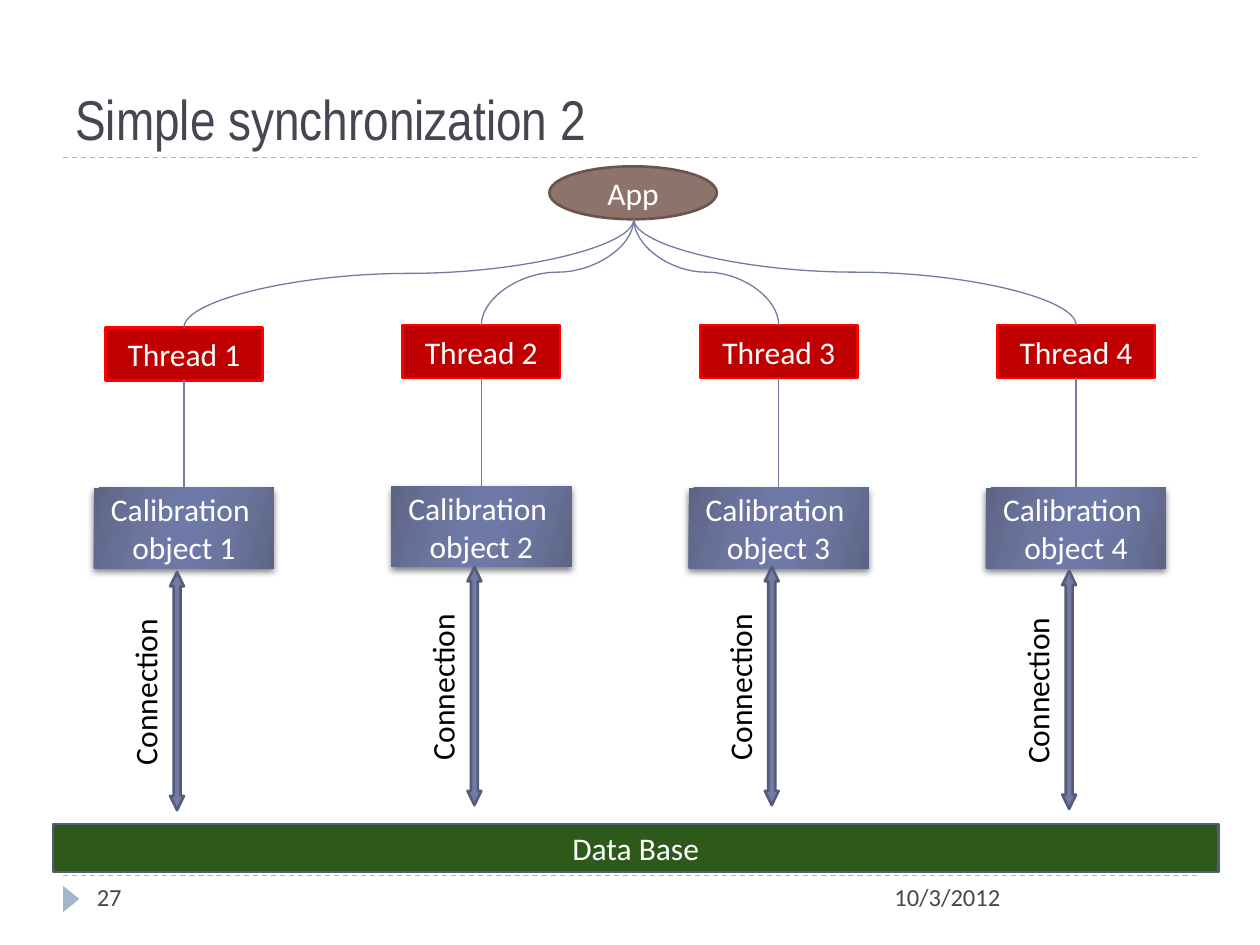
from lxml import etree
from pptx import Presentation
from pptx.dml.color import RGBColor
from pptx.enum.dml import MSO_LINE
from pptx.enum.shapes import MSO_CONNECTOR, MSO_SHAPE
from pptx.enum.text import MSO_ANCHOR, PP_ALIGN
from pptx.oxml import parse_xml
from pptx.oxml.ns import qn
from pptx.util import Inches, Pt

STRAIGHT, CURVE = MSO_CONNECTOR.STRAIGHT, MSO_CONNECTOR.CURVE
RECTANGLE, OVAL = MSO_SHAPE.RECTANGLE, MSO_SHAPE.OVAL
TRIANGLE, DOUBLE_ARROW = MSO_SHAPE.ISOSCELES_TRIANGLE, MSO_SHAPE.LEFT_RIGHT_ARROW
TOP, MIDDLE, BOTTOM = MSO_ANCHOR.TOP, MSO_ANCHOR.MIDDLE, MSO_ANCHOR.BOTTOM
LEFT, CENTER = PP_ALIGN.LEFT, PP_ALIGN.CENTER
DASH = MSO_LINE.DASH
SITE_TOP, SITE_BOTTOM = 0, 2
DRAWING_NS = "http://schemas.openxmlformats.org/drawingml/2006/main"

COLORS = {
    "rule": "9FB8CD", "heading": "464653", "white": "FFFFFF", "black": "000000",
    "app": "8E736A", "app_edge": "69554E", "thread": "C00000", "thread_edge": "FF0000",
    "database": "2D591B", "edge": "545C79", "link": "727CA3",
}
CALIBRATION_STOPS = [(0, "5D6585"), (30, "6B759E"), (45, "6E79A7"),
                     (55, "6E79A7"), (73, "6B759E"), (100, "5D6585")]
LABELS = [
    ("Simple synchronization 2", (0.5, 0.17, 9, 1.08), 32, "Arial Narrow", BOTTOM),
    ("10/3/2012", (7, 6.95, 2.5, 0.4), 14, "Calibri", TOP),
    ("27", (0.67, 6.95, 2.17, 0.4), 14, "Calibri", TOP),
]
RULES = [6.95, 1.25]
LANES = [
    {"number": 1, "thread": 2.6, "calibration": 3.87, "arrow": 5.43},
    {"number": 2, "thread": 2.58, "calibration": 3.86, "arrow": 5.39},
    {"number": 3, "thread": 2.58, "calibration": 3.87, "arrow": 5.39},
    {"number": 4, "thread": 2.58, "calibration": 3.87, "arrow": 5.42},
]
FIRST_CENTER, LANE_STEP = 1.46, 2.36
APP_CENTER, APP_BOTTOM = 5.03, 1.74
THREAD_WIDTH, CALIBRATION_WIDTH = 1.25, 1.43
ARROW_LENGTH, LABEL_LENGTH = 1.89, 1.38


def color(name):
    return RGBColor.from_string(COLORS[name])


def write(shape, text, ink="white", size=18, font="Calibri", align=CENTER, anchor=MIDDLE, wrap=True):
    frame = shape.text_frame
    frame.text = text
    frame.word_wrap = wrap
    frame.vertical_anchor = anchor
    for para in frame.paragraphs:
        para.alignment = align
        for span in para.runs:
            span.font.size = Pt(size)
            span.font.name = font
            span.font.color.rgb = color(ink)


def add_box(shapes, kind, place, fill, edge=None):
    box = shapes.add_shape(kind, *map(Inches, place))
    box.shadow.inherit = False
    box.fill.solid()
    box.fill.fore_color.rgb = color(fill)
    if edge:
        box.line.color.rgb = color(edge)
        box.line.width = Pt(1.5)
    else:
        box.line.fill.background()
    return box


def add_line(kind, ends, ink):
    line = page.shapes.add_connector(kind, *map(Inches, ends))
    line.line.color.rgb = color(ink)
    line.line.width = Pt(0.75)
    etree.SubElement(line._element.spPr, qn("a:effectLst"))
    return line


def add_branch(x, y):
    drop, reach = y - APP_BOTTOM, abs(x - APP_CENTER)
    left = (x + APP_CENTER - drop) / 2
    top = (y + APP_BOTTOM - reach) / 2
    branch = add_line(CURVE, (left, top, left + drop, top + reach), "link")
    frame = branch._element.spPr.find(qn("a:xfrm"))
    if x < APP_CENTER:
        frame.set("rot", "5400000")
    else:
        frame.set("rot", "16200000")
        frame.set("flipH", "1")


def style_calibration(box):
    box.fill.gradient()
    box.fill.gradient_angle = 344
    stops = box._element.spPr.find(qn("a:gradFill")).find(qn("a:gsLst"))
    for stop in list(stops):
        stops.remove(stop)
    for percent, value in CALIBRATION_STOPS:
        stop = etree.SubElement(stops, qn("a:gs"), pos=str(percent * 1000))
        etree.SubElement(stop, qn("a:srgbClr"), val=value)
    box._element.spPr.find(qn("a:effectLst")).append(parse_xml(
        f'<a:outerShdw xmlns:a="{DRAWING_NS}" blurRad="50800" dist="25400" dir="5400000" '
        'rotWithShape="0"><a:srgbClr val="000000"><a:alpha val="50000"/></a:srgbClr></a:outerShdw>'))


def add_connection(center, top):
    shapes = page.shapes.add_group_shape().shapes
    left = center - 1
    arrow = add_box(shapes, DOUBLE_ARROW, (left, top, ARROW_LENGTH, 0.11), "link", "edge")
    arrow.adjustments[0], arrow.adjustments[1] = 0.5, 1.03
    arrow.rotation = 90
    label = shapes.add_textbox(*map(Inches, (left, top - 0.15, LABEL_LENGTH, 0.4)))
    label.rotation = 270
    write(label, "Connection", "black", align=LEFT, anchor=TOP, wrap=False)


deck = Presentation()
deck.slide_width, deck.slide_height = Inches(10), Inches(7.5)
page = deck.slides.add_slide(deck.slide_layouts[6])

for y in RULES:
    add_line(STRAIGHT, (0.5, y, 9.5, y), "rule").line.dash_style = DASH
add_box(page.shapes, TRIANGLE, (0.46, 7.07, 0.21, 0.13), "rule").rotation = 90
for text, place, size, font, anchor in LABELS:
    label = page.shapes.add_textbox(*map(Inches, place))
    write(label, text, "heading", size, font, LEFT, anchor)

app = add_box(page.shapes, OVAL, (4.36, 1.32, 1.33, 0.42), "app", "app_edge")
write(app, "App")
database = add_box(page.shapes, RECTANGLE, (0.42, 6.54, 9.25, 0.38), "database", "edge")
write(database, "Data Base")

for index, lane in enumerate(LANES):
    center = FIRST_CENTER + index * LANE_STEP
    thread = add_box(page.shapes, RECTANGLE,
                     (center - THREAD_WIDTH / 2, lane["thread"], THREAD_WIDTH, 0.42),
                     "thread", "thread_edge")
    write(thread, f"Thread {lane['number']}")
    add_branch(center, lane["thread"])

    calibration = add_box(page.shapes, RECTANGLE,
                          (center - CALIBRATION_WIDTH / 2, lane["calibration"], CALIBRATION_WIDTH, 0.64),
                          "link")
    style_calibration(calibration)
    write(calibration, f"Calibration \nobject {lane['number']}")
    add_connection(center, lane["arrow"])

    link = add_line(STRAIGHT, (center, lane["thread"] + 0.42, center, lane["calibration"]), "link")
    link.begin_connect(thread, SITE_BOTTOM)
    link.end_connect(calibration, SITE_TOP)

deck.save("out.pptx")
